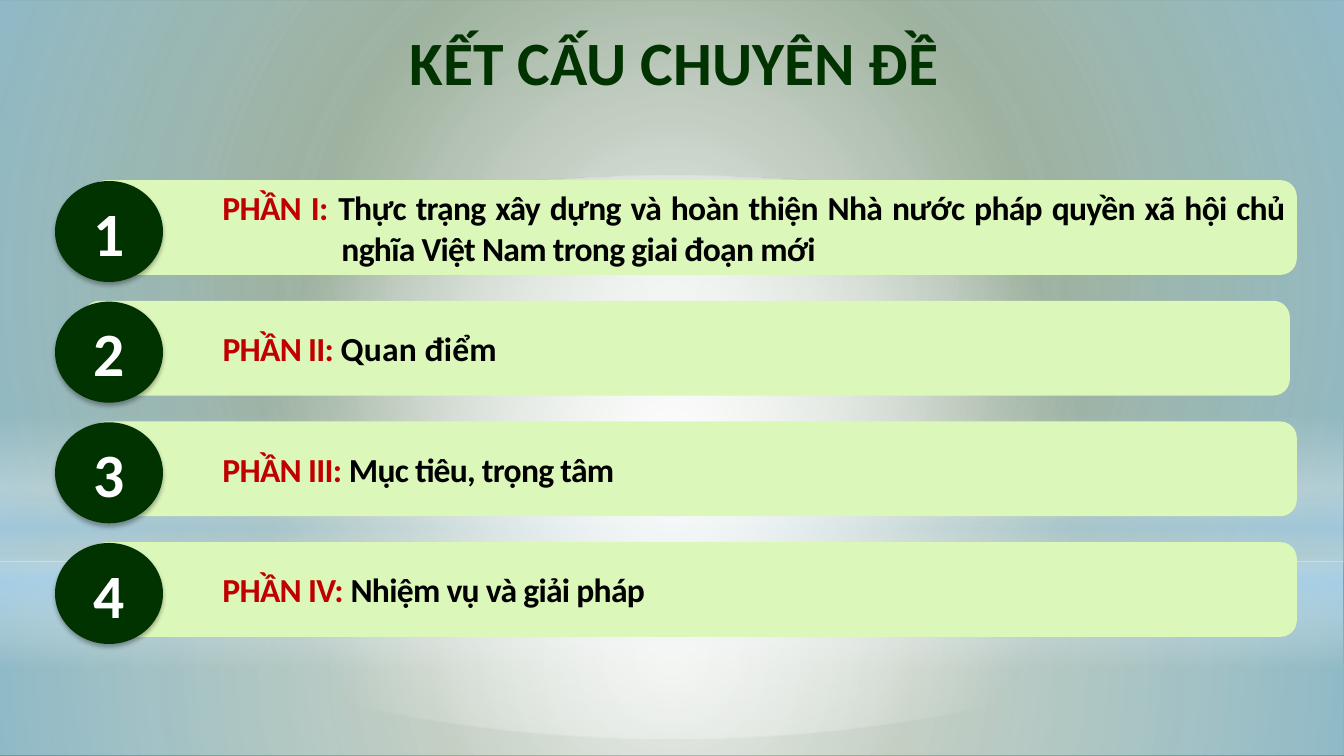
"""Build the outline slide: a title and four numbered bars on a layered gradient."""
from lxml import etree
from pptx import Presentation, util as u
from pptx.dml.color import RGBColor
from pptx.enum import shapes, text
from pptx.oxml.ns import qn

COLORS = {"dark": "003300", "bar": "DCF7BA", "label": "C00000",
          "ink": "000000", "white": "FFFFFF", "sky": "B4DCFA"}
FONT = "Calibri"
SCALE = 914400 / 100.8
SLIDE_W, SLIDE_H = 1344, 756

TITLE = "KẾT CẤU CHUYÊN ĐỀ"
JUSTIFY, LEFT = text.PP_ALIGN.JUSTIFY, text.PP_ALIGN.LEFT
CENTER = text.PP_ALIGN.CENTER
# label, wording, bar left, alignment, left margin, first-line indent, spacing
PARTS = [
    ("PHẦN I: ", "Thực trạng xây dựng và hoàn thiện Nhà nước pháp quyền xã hội chủ "
     "nghĩa Việt Nam trong giai đoạn mới", 91, JUSTIFY, 239, -119, -50),
    ("PHẦN II: ", "Quan điểm", 84, LEFT, 240, -113, 10),
    ("PHẦN III: ", "Mục tiêu, trọng tâm", 91, JUSTIFY, 138, -18, -50),
    ("PHẦN IV: ", "Nhiệm vụ và giải pháp", 91, JUSTIFY, 138, -18, -50),
]
RECT, OVAL = shapes.MSO_SHAPE.RECTANGLE, shapes.MSO_SHAPE.OVAL
ROUND = shapes.MSO_SHAPE.ROUNDED_RECTANGLE
# preset, box, stops (position, colour, opacity), linear angle or None for circular
LAYERS = [
    (RECT, (0, 562, SLIDE_W, 194),
     [(0, "white", 91), (37, "white", 76), (100, "sky", 79)], None),
    (RECT, (0, 0, SLIDE_W, 562),
     [(0, "white", 89), (48, "white", 62), (100, "sky", 79)], None),
    (RECT, (0, 415, SLIDE_W, 252),
     [(0, "white", 0), (29, "white", 30), (45, "sky", 40), (55, "white", 26),
      (65, "sky", 60), (100, "white", 0)], 90),
    (OVAL, (0, 176, SLIDE_W, 562), [(0, "white", 100), (56, "white", 0)], None),
]
ROWS_TOP, ROWS_SPAN = 181, 362
BAR_W, BAR_H = 1205, 93
DISC_X, DISC_W, DISC_H = 55, 108, 101


def px(n):
    return u.Emu(round(n * SCALE))


def rgb(name):
    return RGBColor.from_string(COLORS[name])


def node(parent, tag, **attrs):
    return etree.SubElement(parent, qn(tag), {k: str(v) for k, v in attrs.items()})


def color_node(parent, name, opacity):
    clr = node(parent, "a:srgbClr", val=COLORS[name])
    node(clr, "a:alpha", val=opacity * 1000)


def add_shape(s, preset, box, fill=None, line=None):
    sp = s.shapes.add_shape(preset, *map(px, box))
    sp.shadow.inherit = False
    if fill:
        sp.fill.solid()
        sp.fill.fore_color.rgb = rgb(fill)
    if line:
        sp.line.color.rgb = rgb(line)
        sp.line.width = u.Pt(1.25)
    else:
        sp.line.fill.background()
    return sp


def set_gradient(sp, stops, angle):
    grad = etree.Element(qn("a:gradFill"), rotWithShape="1")
    gs_list = node(grad, "a:gsLst")
    for pos, name, opacity in stops:
        color_node(node(gs_list, "a:gs", pos=pos * 1000), name, opacity)
    if angle is None:
        focus = node(grad, "a:path", path="circle")
        node(focus, "a:fillToRect", l=50000, t=50000, r=50000, b=50000)
    else:
        node(grad, "a:lin", ang=angle * 60000, scaled=0)
    sp._element.spPr.find(qn("a:prstGeom")).addnext(grad)


def set_shadow(sp):
    effects = sp._element.spPr.find(qn("a:effectLst"))
    shadow = node(effects, "a:outerShdw", blurRad=u.Pt(3.5), dist=u.Pt(2.2),
                  dir=90 * 60000, rotWithShape=0)
    color_node(shadow, "ink", 32)


def set_frame(sp):
    tf = sp.text_frame
    tf.word_wrap = True
    tf.vertical_anchor = text.MSO_ANCHOR.MIDDLE
    tf.margin_left = tf.margin_right = px(7)
    tf.margin_top = tf.margin_bottom = px(4)
    return tf.paragraphs[0]


def add_run(p, words, size, color, spacing=0):
    r = p.add_run()
    r.text = words
    r.font.name, r.font.size, r.font.bold = FONT, u.Pt(size), True
    r.font.color.rgb = rgb(color)
    if spacing:
        r._r.get_or_add_rPr().set("spc", str(spacing))


def add_part(s, number, top, part):
    label, wording, left, align, margin, indent, spacing = part
    bar = add_shape(s, ROUND, (left, top, BAR_W, BAR_H), "bar", "bar")
    p = set_frame(bar)
    p.alignment = align
    pPr = p._p.get_or_add_pPr()
    pPr.set("marL", str(px(margin)))
    pPr.set("indent", str(px(indent)))
    add_run(p, label, 24, "label", -50)
    add_run(p, wording, 24, "ink", spacing)

    disc = add_shape(s, OVAL, (DISC_X, top, DISC_W, DISC_H), "dark")
    set_shadow(disc)
    p = set_frame(disc)
    p.alignment = CENTER
    add_run(p, str(number), 44, "white")


def main():
    prs = Presentation()
    prs.slide_width, prs.slide_height = px(SLIDE_W), px(SLIDE_H)
    s = prs.slides.add_slide(prs.slide_layouts[6])
    s.background.fill.solid()
    s.background.fill.fore_color.rgb = rgb("dark")
    for preset, box, stops, angle in LAYERS:
        set_gradient(add_shape(s, preset, box), stops, angle)

    title = s.shapes.add_textbox(*map(px, (0, 19, SLIDE_W, 93)))
    title.text_frame.word_wrap = True
    p = title.text_frame.paragraphs[0]
    p.alignment = CENTER
    p.space_after = u.Pt(3)
    p._p.get_or_add_pPr().set("marL", str(px(5)))
    add_run(p, TITLE, 44, "dark")

    pitch = ROWS_SPAN / (len(PARTS) - 1)
    for i, part in enumerate(PARTS):
        add_part(s, i + 1, ROWS_TOP + i * pitch, part)
    prs.save("out.pptx")


if __name__ == "__main__":
    main()
